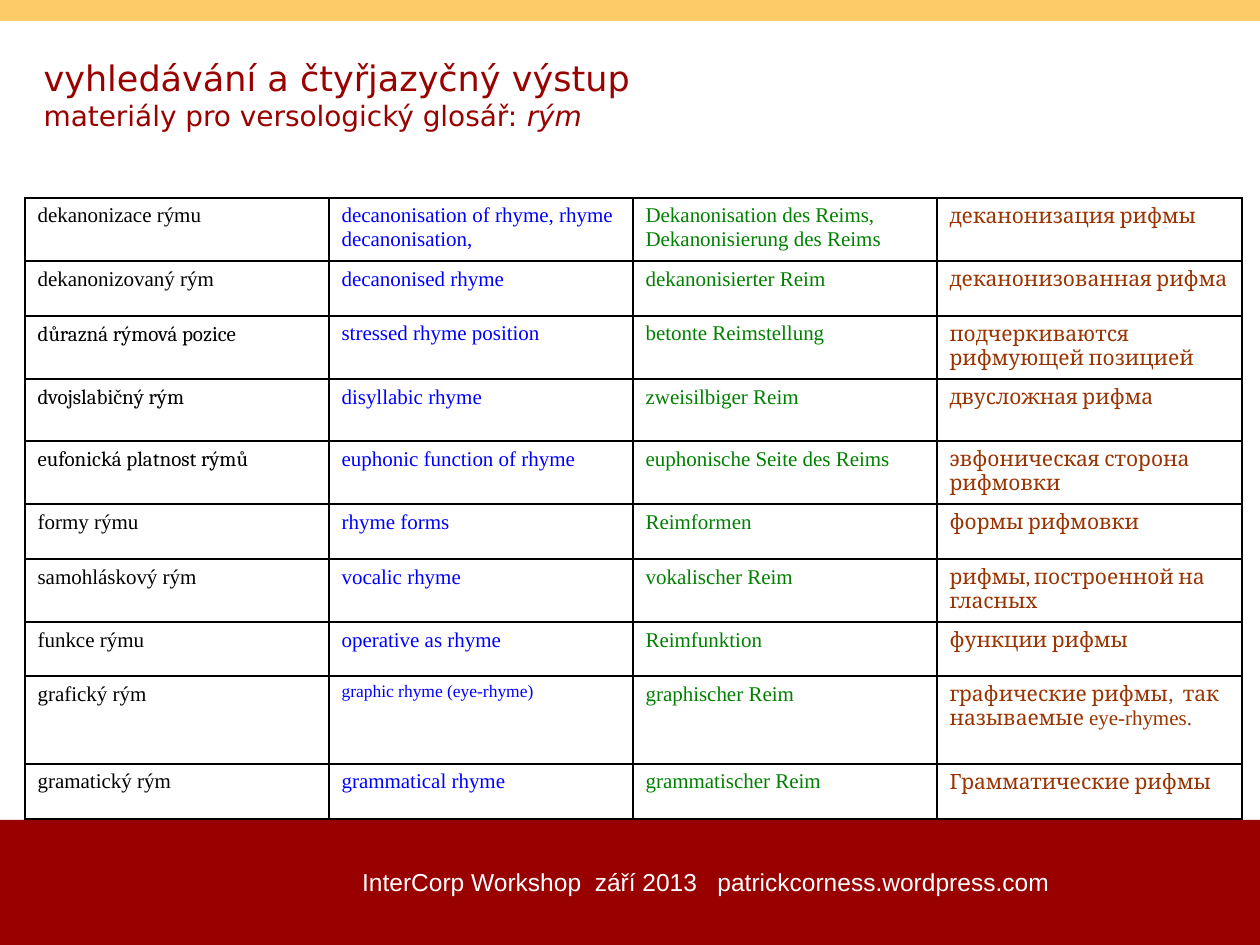
from copy import deepcopy

from lxml import etree
from pptx import Presentation
from pptx import util as u
from pptx.dml.color import RGBColor
from pptx.enum import shapes, text
from pptx.oxml.ns import qn

SERIF, CAMBRIA = "Times New Roman", "Cambria"
RED, YELLOW, WHITE, BLACK = "990000", "FDCC66", "FFFFFF", "000000"
LANGUAGE_COLOURS = [BLACK, "0000FF", "008000", "993300"]
LANGUAGE_FONTS = [SERIF, SERIF, SERIF, CAMBRIA]
COLUMN_WIDTHS = [304, 304, 304, 305]
ROW_HEIGHTS = [63, 55, 63, 62, 63, 55, 63, 54, 88, 55]

GLOSSARY = [
    ["dekanonizace rýmu", "decanonisation of rhyme, rhyme decanonisation,",
     "Dekanonisation des Reims, Dekanonisierung des Reims", "деканонизация рифмы"],
    ["dekanonizovaný rým", "decanonised rhyme", "dekanonisierter Reim",
     "деканонизованная рифма"],
    [[("důrazná rýmová pozice", CAMBRIA, 12)], "stressed rhyme position",
     "betonte Reimstellung", "подчеркиваются рифмующей позицией"],
    [[("dvojslabičný rým", CAMBRIA, 12)], "disyllabic rhyme", "zweisilbiger Reim",
     "двусложная рифма"],
    [[("eufonická platnost rýmů", CAMBRIA, 12)], "euphonic function of rhyme",
     "euphonische Seite des Reims", "эвфоническая сторона рифмовки"],
    ["formy rýmu", "rhyme forms", "Reimformen", "формы рифмовки"],
    ["samohláskový rým", "vocalic rhyme", "vokalischer Reim",
     "рифмы, построенной на гласных"],
    ["funkce rýmu", "operative as rhyme", "Reimfunktion", "функции рифмы"],
    ["grafický rým", [("graphic rhyme (eye-rhyme)", SERIF, 10)], "graphischer Reim",
     [("графические рифмы", CAMBRIA, 12), (",", SERIF, 12),
      ("  так называемые ", CAMBRIA, 12), ("eye-rhymes.", SERIF, 12)]],
    ["gramatický rým", "grammatical rhyme", "grammatischer Reim",
     "Грамматические рифмы"],
]


def px(length):
    """Turn pixels into EMU."""
    return u.Emu(round(length * 914400 / 126))


def colour(value):
    """Turn a hex string into a colour."""
    return RGBColor.from_string(value)


def add_span(para, words, font, size, hue, italic=None):
    """Add one formatted run to a paragraph."""
    span = para.add_run()
    span.text = words
    span.font.name = font
    span.font.size = u.Pt(size)
    span.font.color.rgb = colour(hue)
    span.font.italic = italic
    return span


def add_bar(page, top, height, hue):
    """Draw a full-width band."""
    bar = page.shapes.add_shape(
        shapes.MSO_SHAPE.RECTANGLE, 0, px(top), px(1260), px(height))
    bar.shadow.inherit = False
    bar.fill.solid()
    bar.fill.fore_color.rgb = colour(hue)
    bar.line.fill.background()


def set_title(page):
    """Place the title and write its two lines."""
    title = page.shapes.title
    title.left, title.top, title.width, title.height = map(px, (31, 49, 1187, 90))
    frame = title.text_frame
    frame.word_wrap = True
    frame.auto_size = text.MSO_AUTO_SIZE.SHAPE_TO_FIT_TEXT
    frame.vertical_anchor = text.MSO_ANCHOR.MIDDLE
    para = frame.paragraphs[0]
    para.alignment = text.PP_ALIGN.LEFT
    heading = add_span(para, "vyhledávání a čtyřjazyčný výstup ", "DejaVu Sans", 20, RED)
    para.add_line_break()
    para._p.find(qn("a:br")).append(deepcopy(heading._r.rPr))
    add_span(para, "materiály pro versologický glosář: ", "DejaVu Sans", 16, RED)
    add_span(para, "rým", "DejaVu Sans", 16, RED, italic=True)


def add_footer(page):
    """Write the event line on the lower band."""
    box = page.shapes.add_textbox(px(324), px(861), px(764), px(72))
    box.text_frame.word_wrap = True
    para = box.text_frame.paragraphs[0]
    para.alignment = text.PP_ALIGN.CENTER
    add_span(para, "InterCorp Workshop  září 2013   patrickcorness.wordpress.com",
             "Arial", 14, WHITE)


def format_cell(cell):
    """Give a cell black borders and no fill."""
    properties = cell._tc.get_or_add_tcPr()
    for side in ("a:lnL", "a:lnR", "a:lnT", "a:lnB"):
        line = etree.SubElement(properties, qn(side), w=str(u.Pt(1)))
        fill = etree.SubElement(line, qn("a:solidFill"))
        etree.SubElement(fill, qn("a:srgbClr"), val=BLACK)
    cell.fill.background()


def add_glossary(page):
    """Build the table of terms in four languages."""
    table = page.shapes.add_table(
        len(GLOSSARY), len(COLUMN_WIDTHS), px(25), px(198),
        px(sum(COLUMN_WIDTHS)), px(sum(ROW_HEIGHTS))).table
    table.first_row = table.horz_banding = False
    for column, width in zip(table.columns, COLUMN_WIDTHS):
        column.width = px(width)
    for row, height, terms in zip(table.rows, ROW_HEIGHTS, GLOSSARY):
        row.height = px(height)
        for cell, term, font, hue in zip(
                row.cells, terms, LANGUAGE_FONTS, LANGUAGE_COLOURS):
            format_cell(cell)
            parts = [(term, font, 12)] if isinstance(term, str) else term
            for words, face, size in parts:
                add_span(cell.text_frame.paragraphs[0], words, face, size, hue)


def main():
    """Build and save the deck."""
    deck = Presentation()
    deck.slide_width, deck.slide_height = px(1260), px(945)
    page = deck.slides.add_slide(deck.slide_layouts[5])
    add_bar(page, 820, 125, RED)
    add_bar(page, 0, 21, YELLOW)
    add_footer(page)
    set_title(page)
    add_glossary(page)
    deck.save("out.pptx")


if __name__ == "__main__":
    main()
